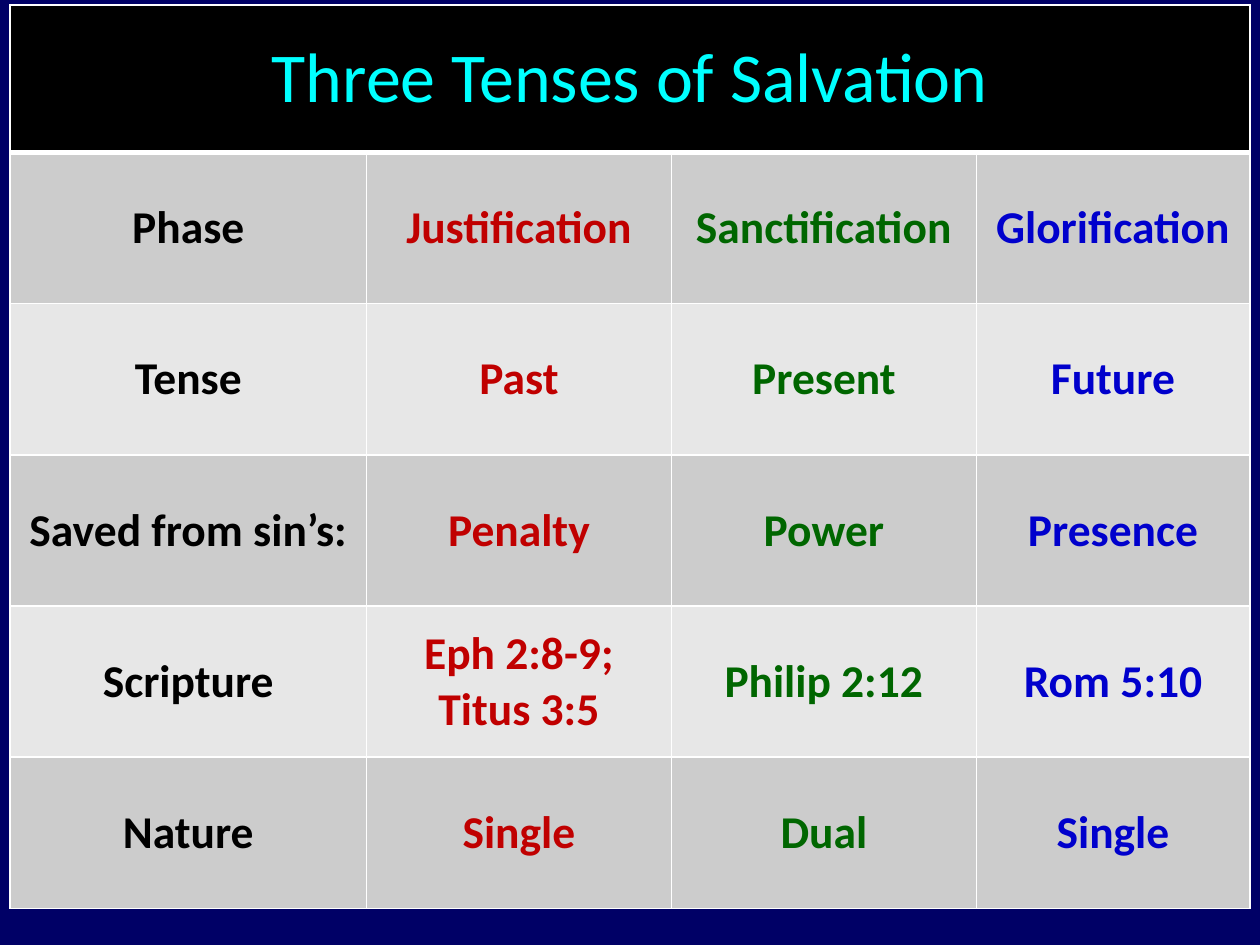
from lxml.etree import SubElement
from pptx import Presentation
from pptx.dml.color import RGBColor
from pptx.enum.text import MSO_ANCHOR, PP_ALIGN
from pptx.oxml.ns import qn
from pptx.util import Inches, Pt

# Content
TITLE = "Three Tenses of Salvation"
ROWS = [
    ("Phase", "Justification", "Sanctification", "Glorification"),
    ("Tense", "Past", "Present", "Future"),
    ("Saved from sin’s:", "Penalty", "Power", "Presence"),
    ("Scripture", "Eph 2:8-9; Titus 3:5", "Philip 2:12", "Rom 5:10"),
    ("Nature", "Single", "Dual", "Single"),
]

# Colours
NAVY = RGBColor(0x00, 0x00, 0x66)
BLACK = RGBColor(0x00, 0x00, 0x00)
CYAN = RGBColor(0x00, 0xFF, 0xFF)
WHITE = RGBColor(0xFF, 0xFF, 0xFF)
RED = RGBColor(0xC0, 0x00, 0x00)
GREEN = RGBColor(0x00, 0x66, 0x00)
BLUE = RGBColor(0x00, 0x00, 0xCC)
COLUMN_COLORS = (BLACK, RED, GREEN, BLUE)
BAND_FILLS = (RGBColor(0xCC, 0xCC, 0xCC), RGBColor(0xE7, 0xE7, 0xE7))

# Layout in inches
LEFT, TOP = 0.08, 0.04
COLUMN_WIDTHS = (2.83, 2.42, 2.42, 2.17)
ROW_HEIGHTS = (1.17,) + (1.2,) * len(ROWS)

TITLE_FORMAT = {"name": "Calibri", "size": Pt(40), "bold": False}
BODY_FORMAT = {"name": "Calibri", "size": Pt(26), "bold": True}


def add_borders(cell, bottom_width=1):
    properties = cell._tc.get_or_add_tcPr()
    for side, width in (("L", 1), ("R", 1), ("T", 1), ("B", bottom_width)):
        line = SubElement(properties, qn(f"a:ln{side}"), w=str(Pt(width)))
        fill = SubElement(line, qn("a:solidFill"))
        SubElement(fill, qn("a:srgbClr"), val=str(WHITE))


def fill_cell(cell, text, color, background, font_format):
    cell.text = text
    cell.vertical_anchor = MSO_ANCHOR.MIDDLE
    cell.fill.solid()
    cell.fill.fore_color.rgb = background
    paragraph = cell.text_frame.paragraphs[0]
    paragraph.alignment = PP_ALIGN.CENTER
    font = paragraph.runs[0].font
    for name, value in font_format.items():
        setattr(font, name, value)
    font.color.rgb = color


# Slide
presentation = Presentation()
presentation.slide_width, presentation.slide_height = Inches(10), Inches(7.5)
slide = presentation.slides.add_slide(presentation.slide_layouts[6])
slide.background.fill.solid()
slide.background.fill.fore_color.rgb = NAVY

# Table grid
table = slide.shapes.add_table(
    len(ROW_HEIGHTS), len(COLUMN_WIDTHS), Inches(LEFT), Inches(TOP),
    Inches(sum(COLUMN_WIDTHS)), Inches(sum(ROW_HEIGHTS)),
).table
for column, width in zip(table.columns, COLUMN_WIDTHS):
    column.width = Inches(width)
for row, height in zip(table.rows, ROW_HEIGHTS):
    row.height = Inches(height)

# Title row across all columns
title_cell = table.cell(0, 0)
title_cell.merge(table.cell(0, len(COLUMN_WIDTHS) - 1))
for cell in table.rows[0].cells:
    add_borders(cell, bottom_width=3)
fill_cell(title_cell, TITLE, CYAN, BLACK, TITLE_FORMAT)

# Banded body rows, one text colour per column
for row_index, texts in enumerate(ROWS):
    background = BAND_FILLS[row_index % 2]
    for column_index, (text, color) in enumerate(zip(texts, COLUMN_COLORS)):
        cell = table.cell(row_index + 1, column_index)
        add_borders(cell)
        fill_cell(cell, text, color, background, BODY_FORMAT)

presentation.save("out.pptx")
